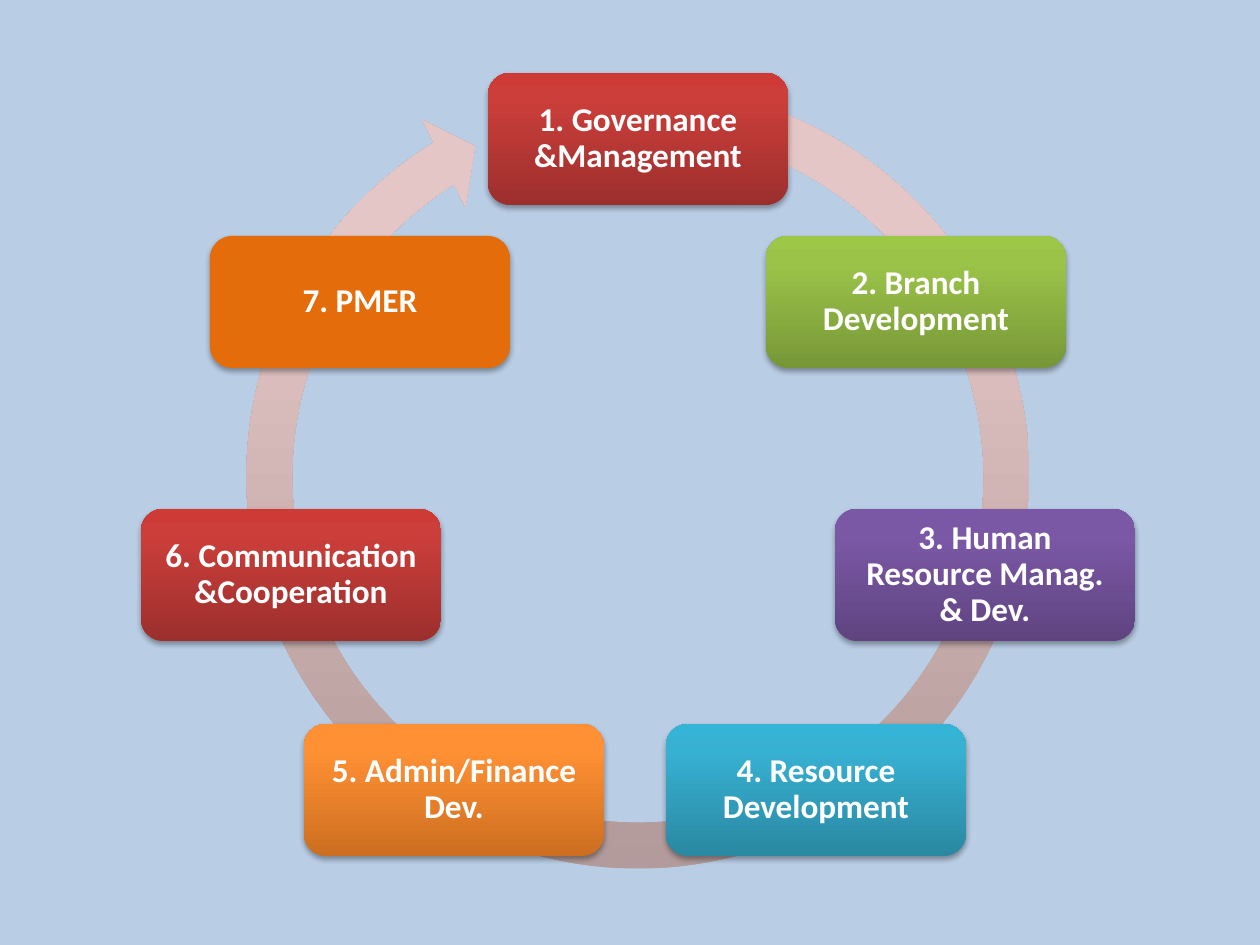
from copy import deepcopy
from lxml import etree
from pptx import Presentation
from pptx import util as u
from pptx.dml.color import RGBColor
from pptx.enum import shapes, text
from pptx.oxml.ns import qn

PX = 914400 // 126
HUES = {
    "back": "B9CDE5", "text": "FFFFFF", "shade": "000000", "pmer": "E46C0A",
    # gradients run from bottom to top
    "ring": ("B09998", "E5C6C6", "E6C7C6"),
    "red": ("9C2F2D", "CB3E3A", "CE3B37"),
    "green": ("779737", "9BC348", "9DC746"),
    "purple": ("5F4480", "7B58A6", "7C57A8"),
    "blue": ("2A88A2", "37B1D2", "34B4D6"),
    "orange": ("CC6E20", "FF9034", "FF9136"),
}


def paint(fill, hue):
    if isinstance(hue, str):
        fill.solid()
        fill.fore_color.rgb = RGBColor.from_string(hue)
        return
    fill.gradient()
    fill.gradient_angle = 90
    last = fill.gradient_stops[1]._gs
    last.addnext(deepcopy(last))
    for stop, spot, tone in zip(fill.gradient_stops, (0, 0.8, 1), hue):
        stop.position = spot
        stop.color.rgb = RGBColor.from_string(tone)


def add(kind, left, top, wide, high, hue):
    item = slide.shapes.add_shape(kind, *(n * PX for n in (left, top, wide, high)))
    item.shadow.inherit = False
    item.line.fill.background()
    paint(item.fill, hue)
    return item


deck = Presentation()
deck.slide_width, deck.slide_height = u.Inches(10), u.Inches(7.5)
slide = deck.slides.add_slide(deck.slide_layouts[6])
paint(slide.background.fill, HUES["back"])

# Ring with arrowhead
ring = add(shapes.MSO_SHAPE.CIRCULAR_ARROW, 221, 60, 834, 834, HUES["ring"])
for i, size in enumerate((0.055, 3.31, 142.95, 170.78, 0.058)):
    ring.adjustments[i] = size

# Steps, clockwise from the top
steps = [
    ("1. Governance &Management", 488, 73, "red"),
    ("2. Branch Development", 766, 236, "green"),
    ("3. Human Resource Manag. & Dev.", 835, 509, "purple"),
    ("4. Resource Development", 666, 724, "blue"),
    ("5. Admin/Finance Dev.", 304, 724, "orange"),
    ("6. Communication &Cooperation", 141, 509, "red"),
    ("7. PMER", 210, 236, "pmer"),
]
for label, left, top, hue in steps:
    box = add(shapes.MSO_SHAPE.ROUNDED_RECTANGLE, left, top, 300, 132, HUES[hue])

    # Soft shadow below
    cast = etree.SubElement(
        box._element.spPr.find(qn("a:effectLst")), qn("a:outerShdw"),
        blurRad="40000", dist="23000", dir="5400000", rotWithShape="0")
    tint = etree.SubElement(cast, qn("a:srgbClr"), val=HUES["shade"])
    etree.SubElement(tint, qn("a:alpha"), val="35000")

    # Label
    frame = box.text_frame
    frame.word_wrap = True
    frame.vertical_anchor = text.MSO_ANCHOR.MIDDLE
    frame.margin_left = frame.margin_right = 16 * PX
    frame.margin_top = frame.margin_bottom = 16 * PX
    para = frame.paragraphs[0]
    para.text = label
    para.alignment = text.PP_ALIGN.CENTER
    para.line_spacing = 0.9
    font = para.font
    font.name, font.size, font.bold = "Calibri", u.Pt(19), True
    font.color.rgb = RGBColor.from_string(HUES["text"])

deck.save("out.pptx")
